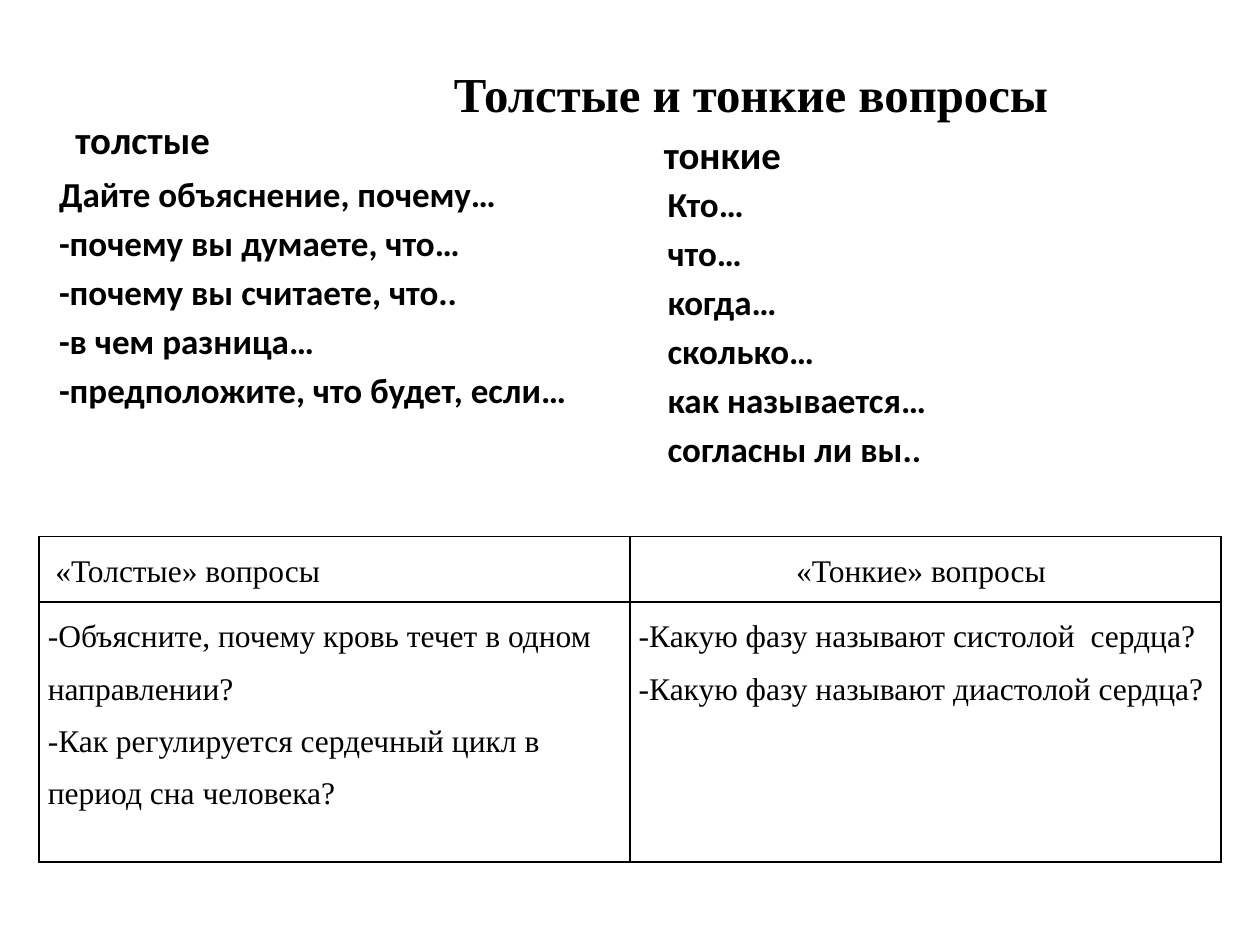
from pptx import Presentation
from pptx.dml.color import RGBColor
from pptx.enum.text import MSO_ANCHOR, MSO_AUTO_SIZE, PP_ALIGN
from pptx.oxml import parse_xml
from pptx.oxml.ns import nsdecls
from pptx.util import Inches, Pt

TOP, MID, LOW = MSO_ANCHOR.TOP, MSO_ANCHOR.MIDDLE, MSO_ANCHOR.BOTTOM
LEFT, CENTER = PP_ALIGN.LEFT, PP_ALIGN.CENTER
FIXED = MSO_AUTO_SIZE.NONE

THEME = {
    "ink": "000000", "serif": "Times New Roman", "sans": "Calibri",
    "title": 27.9, "head": 22.2, "list": 20, "cell": 18, "line": 1,
}
WIDE, HIGH = 10, 7.5


def write(frame, lines, face, size, bold=True, align=LEFT, **gaps):
    """Fill the frame with one paragraph per line; gaps are paragraph spacings."""
    for i, line in enumerate(lines):
        para = frame.paragraphs[0] if i == 0 else frame.add_paragraph()
        para.alignment = align
        for name, value in gaps.items():
            setattr(para, name, value)
        run = para.add_run()
        run.text = line
        look = {"name": THEME[face], "size": Pt(THEME[size]), "bold": bold}
        for name, value in look.items():
            setattr(run.font, name, value)
        run.font.color.rgb = RGBColor.from_string(THEME["ink"])


def border(cell):
    props = cell._tc.get_or_add_tcPr()
    for i, side in enumerate(("lnL", "lnR", "lnT", "lnB")):
        props.insert(i, parse_xml(
            f'<a:{side} {nsdecls("a")} w="{Pt(THEME["line"])}"><a:solidFill>'
            f'<a:srgbClr val="{THEME["ink"]}"/></a:solidFill></a:{side}>'))


deck = Presentation()
deck.slide_width, deck.slide_height = Inches(WIDE), Inches(HIGH)
slide = deck.slides.add_slide(deck.slide_layouts[5])

# Title, centred right of the middle through its insets
title = slide.shapes.title
place = {"left": 0.05 * WIDE, "top": 0.04 * HIGH, "width": 0.9 * WIDE, "height": 0.7}
for name, value in place.items():
    setattr(title, name, Inches(value))
frame = title.text_frame
form = {"auto_size": FIXED, "word_wrap": True, "vertical_anchor": MID,
        "margin_left": Inches(2.02), "margin_top": Inches(0.22)}
for name, value in form.items():
    setattr(frame, name, value)
write(frame, ["Толстые и тонкие вопросы"], "serif", "title", align=CENTER)

# Two columns, each a heading over a list
SPAN = 4.42
blocks = [
    (0.5, 0.89, 0.45, LOW, "head", ["толстые"]),
    (0.37, 1.32, 2.49, TOP, "list", [
        "Дайте объяснение, почему…", "-почему вы думаете, что…",
        "-почему вы считаете, что..", "-в чем разница…",
        "-предположите, что будет, если…"]),
    (5.17, 1.05, 0.41, LOW, "head", ["тонкие"]),
    (5.2, 1.4, 2.48, TOP, "list", [
        "Кто…", "что…", "когда…", "сколько…", "как называется…",
        "согласны ли вы.."]),
]
for left, top, tall, anchor, size, lines in blocks:
    box = slide.shapes.add_textbox(*map(Inches, (left, top, SPAN, tall)))
    frame = box.text_frame
    form = {"word_wrap": True, "auto_size": FIXED, "vertical_anchor": anchor}
    for name, value in form.items():
        setattr(frame, name, value)
    write(frame, lines, "sans", size, space_before=Pt(0.2 * THEME[size]))

# Table of sample questions
COL, ROWS, INSET = 4.69, (0.52, 2.06), 0.07
cells = [
    [(0.13, ["«Толстые» вопросы"]), (1.32, ["«Тонкие» вопросы"])],
    [(INSET, ["-Объясните, почему кровь течет в одном направлении?",
              "-Как регулируется сердечный цикл в период сна человека?"]),
     (INSET, ["-Какую фазу называют систолой  сердца?",
              "-Какую фазу называют диастолой сердца?"])],
]
table = slide.shapes.add_table(
    2, 2, *map(Inches, ((WIDE - 2 * COL) / 2, 4.26, 2 * COL, sum(ROWS)))).table
table.first_row = table.horz_banding = False
for r, row in enumerate(cells):
    table.rows[r].height = Inches(ROWS[r])
    for c, (inset, lines) in enumerate(row):
        table.columns[c].width = Inches(COL)
        cell = table.cell(r, c)
        form = {"margin_left": Inches(inset), "margin_right": Inches(INSET),
                "margin_top": 0, "margin_bottom": 0, "vertical_anchor": TOP}
        for name, value in form.items():
            setattr(cell, name, value)
        cell.fill.background()
        border(cell)
        write(cell.text_frame, lines, "serif", "cell", bold=False, line_spacing=1.5)

deck.save("out.pptx")
